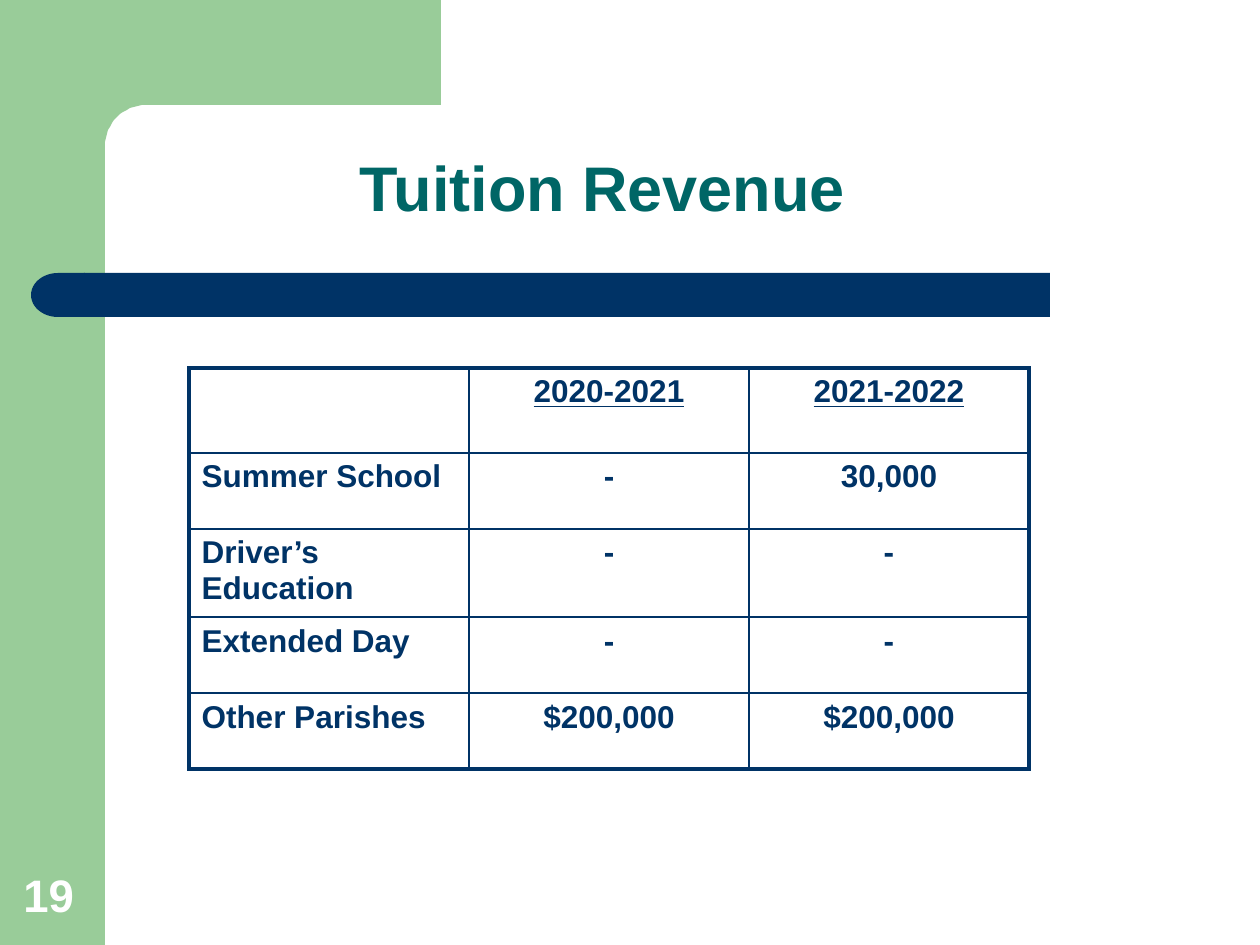
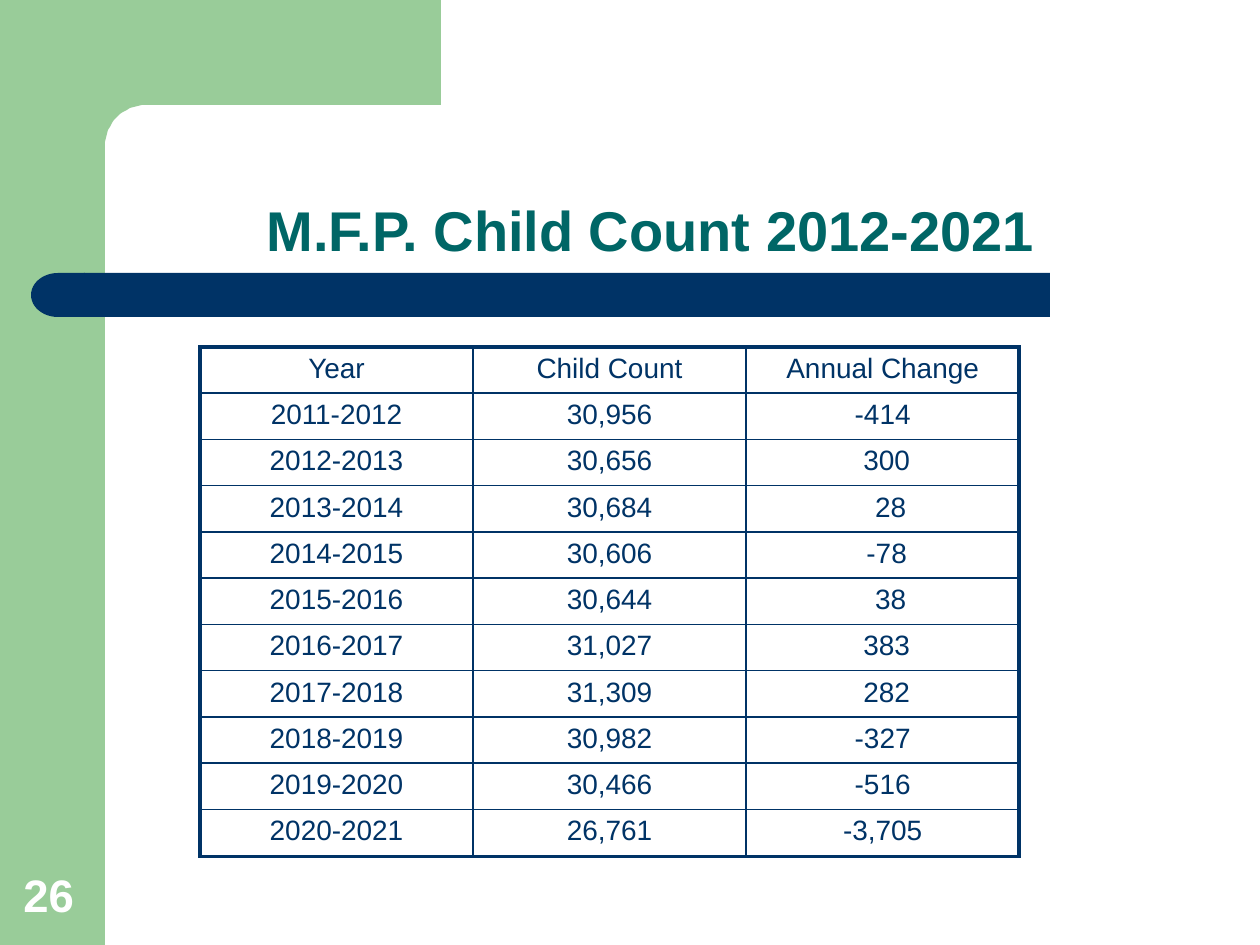
from math import cos, pi, sin

from lxml.etree import SubElement
from pptx import Presentation
from pptx.dml.color import RGBColor
from pptx.enum.shapes import MSO_SHAPE as SHAPE
from pptx.enum.text import MSO_ANCHOR as ANCHOR, MSO_AUTO_SIZE as AUTO, PP_ALIGN as ALIGN
from pptx.oxml.ns import qn
from pptx.util import Emu, Pt

SCALE = 914400 / 126
GREEN, NAVY, TEAL, WHITE = "99CC99", "003366", "006666", "FFFFFF"


def px(n):
    return Emu(round(n * SCALE))


def color(value):
    return RGBColor.from_string(value)


def write(tf, text, size=18, fill=NAVY, bold=False, underline=False,
          align=ALIGN.LEFT, spacing=None):
    p = tf.paragraphs[0]
    p.alignment = align
    p.line_spacing = spacing
    r = p.add_run()
    r.text = text
    font = r.font
    font.name, font.size = "Arial", Pt(size)
    font.bold, font.underline = bold, underline
    font.color.rgb = color(fill)


class Deck:
    def __init__(self):
        self.prs = Presentation()
        self.prs.slide_width, self.prs.slide_height = px(1260), px(945)
        self.slide = None

    def new_slide(self, number):
        self.slide = self.prs.slides.add_slide(self.prs.slide_layouts[5])
        # Green side panel and corner
        self.block(SHAPE.RECTANGLE, 0, 0, 105, 945, GREEN)
        self.corner()
        # Navy band with a rounded left end
        self.block(SHAPE.RECTANGLE, 84, 273, 966, 44, NAVY)
        self.block(SHAPE.FLOWCHART_DELAY, 31, 273, 54, 44, NAVY).rotation = 180
        self.page_number(number)

    def paint(self, sp, fill):
        sp.shadow.inherit = False
        sp.fill.solid()
        sp.fill.fore_color.rgb = color(fill)
        sp.line.fill.background()
        return sp

    def block(self, kind, x, y, w, h, fill):
        sp = self.slide.shapes.add_shape(kind, px(x), px(y), px(w), px(h))
        return self.paint(sp, fill)

    def corner(self):
        steps = 16
        angles = [pi / 2 * i / steps for i in range(steps + 1)]
        arc = [(146 - 41 * sin(a), 146 - 41 * cos(a)) for a in angles]
        builder = self.slide.shapes.build_freeform(63, 0, scale=SCALE)
        builder.add_line_segments([(441, 0), (441, 105), *arc, (105, 161), (63, 161)])
        self.paint(builder.convert_to_shape(), GREEN)

    def page_number(self, number):
        sp = self.slide.shapes.add_textbox(px(11), px(861), px(81), px(67))
        tf = sp.text_frame
        tf.word_wrap = True
        tf.vertical_anchor = ANCHOR.BOTTOM
        write(tf, str(number), size=26, fill=WHITE, bold=True)

    def title(self, text, y, size, align=ALIGN.LEFT, inset=0):
        sp = self.slide.shapes.title
        sp.left, sp.top, sp.width, sp.height = px(105), px(y), px(1092), px(126)
        tf = sp.text_frame
        tf.auto_size = AUTO.NONE
        tf.vertical_anchor = ANCHOR.BOTTOM
        tf.margin_left, tf.margin_right = px(inset), 0
        write(tf, text, size=size, fill=TEAL, bold=True, align=align, spacing=0.9)

    def borders(self, cell, thick):
        tc_pr = cell._tc.get_or_add_tcPr()
        for side, is_outer in zip("LRTB", thick):
            width = Pt(2.25 if is_outer else 1)
            ln = SubElement(tc_pr, qn(f"a:ln{side}"), w=str(width))
            solid = SubElement(ln, qn("a:solidFill"))
            SubElement(solid, qn("a:srgbClr"), val=NAVY)

    def table(self, rows, x, y, col_width, heights, style):
        n_rows, n_cols = len(rows), len(rows[0])
        frame = self.slide.shapes.add_table(n_rows, n_cols, px(x), px(y),
                                            px(col_width * n_cols), px(sum(heights)))
        table = frame.table
        table.first_row = table.horz_banding = False
        for col in table.columns:
            col.width = px(col_width)
        for i, (row, height) in enumerate(zip(rows, heights)):
            table.rows[i].height = px(height)
            for j, text in enumerate(row):
                cell = table.cell(i, j)
                self.borders(cell, (j == 0, j == n_cols - 1, i == 0, i == n_rows - 1))
                cell.fill.background()
                if text:
                    write(cell.text_frame, text, **style(i, j))
        return table


def tuition_style(i, j):
    return dict(size=18, bold=True, underline=i == 0,
                align=ALIGN.CENTER if j else ALIGN.LEFT)


def count_style(i, j):
    return dict(size=16, align=ALIGN.CENTER)


TUITION = [
    ("", "2020-2021", "2021-2022"),
    ("Summer School", "-", "30,000"),
    ("Driver’s Education", "-", "-"),
    ("Extended Day", "-", "-"),
    ("Other Parishes", "$200,000", "$200,000"),
]
CHILD_COUNT = [
    ("Year", "Child Count", "Annual Change"),
    ("2011-2012", "30,956", "-414"),
    ("2012-2013", "30,656", "300"),
    ("2013-2014", "30,684", "28"),
    ("2014-2015", "30,606", "-78"),
    ("2015-2016", "30,644", "38"),
    ("2016-2017", "31,027", "383"),
    ("2017-2018", "31,309", "282"),
    ("2018-2019", "30,982", "-327"),
    ("2019-2020", "30,466", "-516"),
    ("2020-2021", "26,761", "-3,705"),
]


def main():
    deck = Deck()

    # Tuition revenue
    deck.new_slide(19)
    deck.title("Tuition Revenue", y=105, size=36, inset=255)
    deck.table(TUITION, 189, 368, 280, [85, 76, 88, 76, 76], tuition_style)

    # Child count
    deck.new_slide(26)
    deck.title("M.F.P. Child Count 2012-2021", y=144, size=32, align=ALIGN.CENTER)
    table = deck.table(CHILD_COUNT, 200, 347, 273, [44, 45] * 5 + [47], count_style)
    # Short changes sit further right, as if four characters wide
    for i, (_, _, change) in enumerate(CHILD_COUNT):
        table.cell(i, 2).margin_left = px(13 + 8 * max(0, 4 - len(change)))

    deck.prs.save("out.pptx")


if __name__ == "__main__":
    main()
